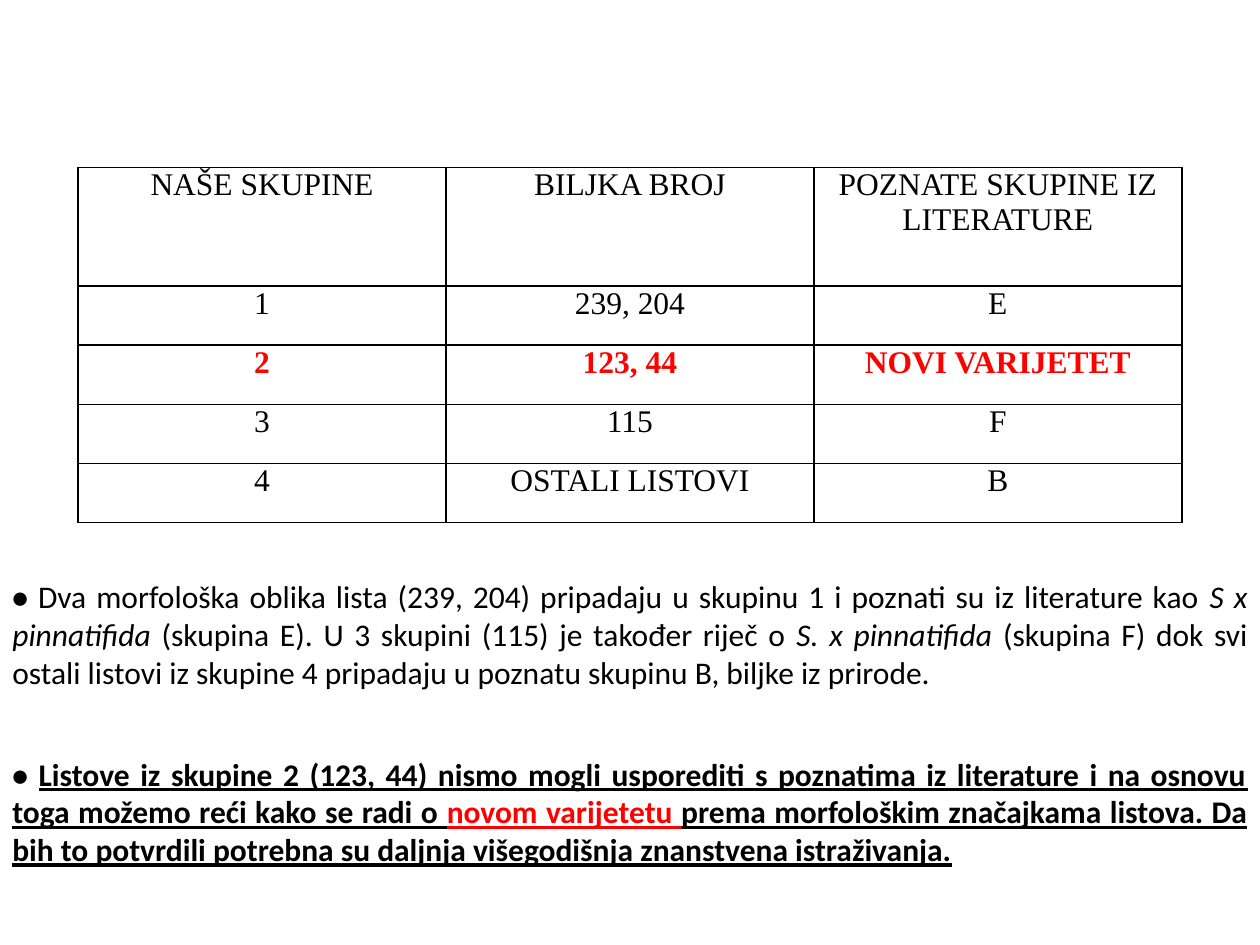
from lxml import etree
from pptx import Presentation
from pptx.dml.color import RGBColor
from pptx.enum import text
from pptx.oxml import ns
from pptx.util import Inches, Pt

BLACK = RGBColor(0, 0, 0)
RED = RGBColor(255, 0, 0)

ROWS = [
    ("NAŠE SKUPINE", "BILJKA BROJ", "POZNATE SKUPINE IZ LITERATURE"),
    ("1", "239, 204", "E"),
    ("2", "123, 44", "NOVI VARIJETET"),
    ("3", "115", "F"),
    ("4", "OSTALI LISTOVI", "B"),
]
NEW_VARIETY_ROW = 2

# Each run: wording and its formatting
KNOWN_GROUPS = [
    ("• ", {"bold": True}),
    ("Dva morfološka oblika lista (239, 204) pripadaju u skupinu 1 i "
     "poznati su iz literature kao ", {}),
    ("S x pinnatifida ", {"italic": True}),
    ("(skupina E). U 3 skupini (115) je također riječ o ", {}),
    ("S. x pinnatifida ", {"italic": True}),
    ("(skupina F) dok svi ostali listovi iz skupine 4 pripadaju u poznatu "
     "skupinu B, biljke iz prirode.", {}),
]
STRONG = {"bold": True, "underline": True}
NEW_VARIETY = [
    ("• ", {"bold": True}),
    ("Listove iz skupine 2 (123, 44) nismo mogli usporediti s poznatima iz "
     "literature i na osnovu toga možemo reći kako se radi o ", STRONG),
    ("novom varijetetu ", {**STRONG, "color": RED}),
    ("prema morfološkim značajkama listova. Da bih to potvrdili potrebna su "
     "daljnja višegodišnja znanstvena istraživanja.", STRONG),
]


def format_run(r, name, color=BLACK, bold=False, italic=False, underline=False):
    r.font.name = name
    r.font.size = Pt(18)
    r.font.color.rgb = color
    r.font.bold = bold
    r.font.italic = italic
    r.font.underline = underline


def add_borders(cell):
    tc_pr = cell._tc.get_or_add_tcPr()
    for i, side in enumerate(("a:lnL", "a:lnR", "a:lnT", "a:lnB")):
        ln = etree.Element(ns.qn(side), w=str(Pt(1)))
        fill = etree.SubElement(ln, ns.qn("a:solidFill"))
        etree.SubElement(fill, ns.qn("a:srgbClr"), val=str(BLACK))
        tc_pr.insert(i, ln)


def fill_cell(cell, wording, highlight):
    cell.margin_left = cell.margin_right = Inches(0.07)
    cell.margin_top = cell.margin_bottom = 0
    cell.fill.background()
    add_borders(cell)
    p = cell.text_frame.paragraphs[0]
    p.text = wording
    p.alignment = text.PP_ALIGN.CENTER
    format_run(p.runs[0], "Times New Roman",
               color=RED if highlight else BLACK, bold=highlight)


def add_group_table(s):
    row_h = 0.47
    frame = s.shapes.add_table(len(ROWS), len(ROWS[0]), Inches(0.62),
                               Inches(1.33), Inches(8.76), Inches(6 * row_h))
    table = frame.table
    for i, row in enumerate(ROWS):
        table.rows[i].height = Inches(row_h if i else 2 * row_h)
        for j, wording in enumerate(row):
            fill_cell(table.cell(i, j), wording, i == NEW_VARIETY_ROW)


def add_conclusion(s, top, runs):
    sp = s.shapes.add_textbox(0, Inches(top), Inches(10), Inches(1.01))
    tf = sp.text_frame
    tf.word_wrap = True
    tf.auto_size = text.MSO_AUTO_SIZE.SHAPE_TO_FIT_TEXT
    p = tf.paragraphs[0]
    p.alignment = text.PP_ALIGN.JUSTIFY
    for wording, style in runs:
        r = p.add_run()
        r.text = wording
        format_run(r, "Calibri", **style)


def main():
    prs = Presentation()
    prs.slide_width, prs.slide_height = Inches(10), Inches(7.5)
    s = prs.slides.add_slide(prs.slide_layouts[6])

    # Comparison of plant groups
    add_group_table(s)

    # Conclusions below the table
    add_conclusion(s, 4.53, KNOWN_GROUPS)
    add_conclusion(s, 5.94, NEW_VARIETY)

    prs.save("out.pptx")


if __name__ == "__main__":
    main()
